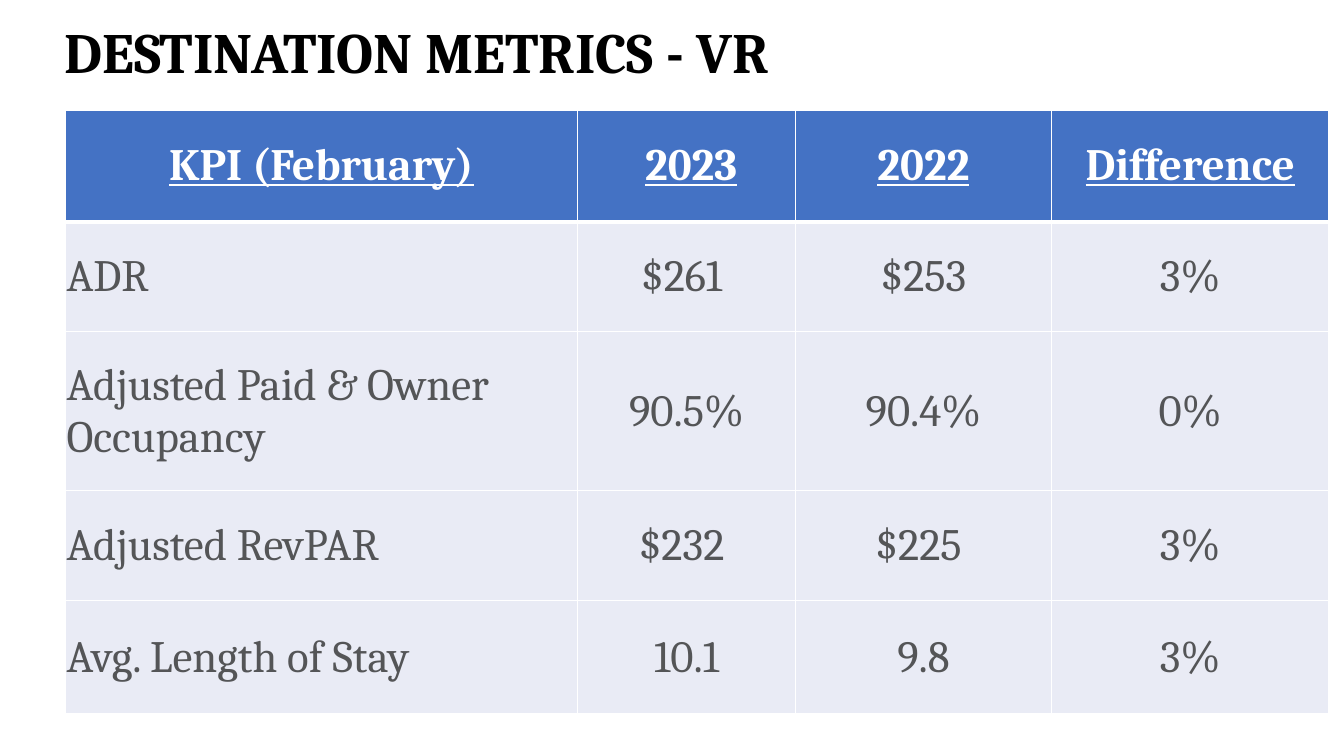
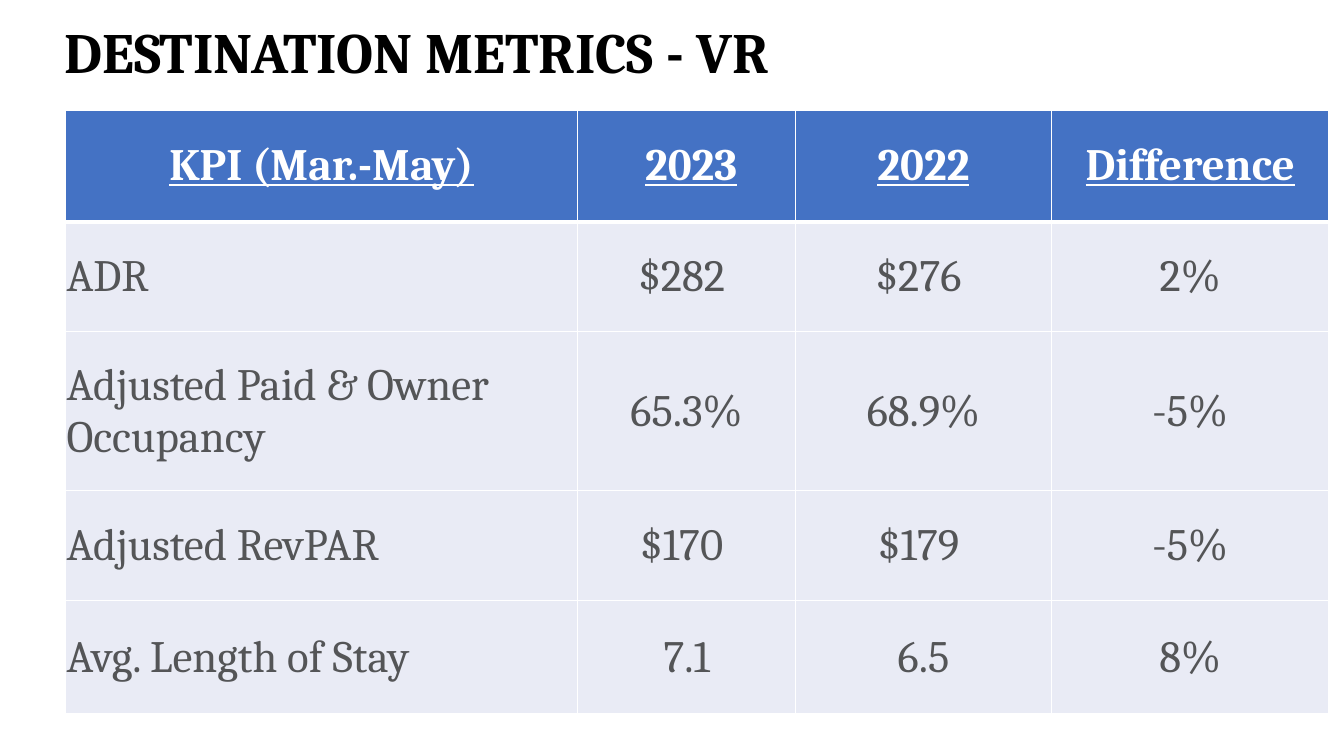
from dataclasses import dataclass

from lxml.etree import SubElement
from pptx import Presentation
from pptx.dml.color import RGBColor
from pptx.enum.text import MSO_ANCHOR as Anchor, PP_ALIGN as Align
from pptx.oxml.ns import qn
from pptx.util import Inches, Pt

# Shared style
FONT = "Cambria"
BLACK, WHITE, GREY = "000000", "FFFFFF", "545557"
BLUE, PALE = "4472C4", "E9EBF5"
TITLE = "DESTINATION METRICS - VR"
COLS = (5.08, 2.16, 2.54, 2.75)
ROWS = (1.1, 1.09, 1.58, 1.09, 1.12)
LABELS = ("ADR", "Adjusted Paid & Owner Occupancy",
          "Adjusted RevPAR", "Avg. Length of Stay")


@dataclass(frozen=True)
class Report:
    period: str
    values: tuple[tuple[str, str, str], ...]

    def grid(self) -> list[tuple[str, ...]]:
        head = (f"KPI ({self.period})", "2023", "2022", "Difference")
        return [head] + [(label, *row) for label, row in zip(LABELS, self.values)]


REPORTS = (
    Report("February", (("$261 ", "$253", "3%"), ("90.5%", "90.4%", "0%"),
                        ("$232 ", "$225 ", "3%"), ("10.1", "9.8", "3%"))),
    Report("Mar.-May", (("$282 ", "$276 ", "2%"), ("65.3%", "68.9%", "-5%"),
                        ("$170 ", "$179 ", "-5%"), ("7.1", "6.5", "8%"))),
)


def color(code: str) -> RGBColor:
    return RGBColor.from_string(code)


def add_run(para, text: str, size: float, code: str,
            bold: bool = False, under: bool = False) -> None:
    run = para.add_run()
    run.text = text
    font = run.font
    font.name, font.size, font.bold, font.underline = FONT, Pt(size), bold, under
    font.color.rgb = color(code)


def add_title(slide) -> None:
    box = slide.shapes.add_textbox(Inches(0.54), Inches(0.17),
                                   Inches(10.42), Inches(0.75))
    frame = box.text_frame
    frame.word_wrap = True
    frame.vertical_anchor = Anchor.MIDDLE
    para = frame.paragraphs[0]
    para.line_spacing = 0.9
    add_run(para, TITLE, 40.7, BLACK, bold=True)


def add_edges(cell, top: float, bottom: float) -> None:
    props = cell._tc.get_or_add_tcPr()
    for side, width in (("L", 1), ("R", 1), ("T", top), ("B", bottom)):
        line = SubElement(props, qn(f"a:ln{side}"), w=str(Pt(width)))
        fill = SubElement(line, qn("a:solidFill"))
        SubElement(fill, qn("a:srgbClr"), val=WHITE)


def fill_cell(cell, text: str, row: int, col: int) -> None:
    head = row == 0
    add_edges(cell, top=3 if row == 1 else 1, bottom=3 if head else 1)
    cell.fill.solid()
    cell.fill.fore_color.rgb = color(BLUE if head else PALE)

    # Only the first year heading is inset
    pad = 0 if head else 0.01
    cell.margin_left = Inches(0.09 if head and col == 1 else pad)
    cell.margin_top = cell.margin_right = Inches(pad)
    cell.margin_bottom = Inches(0)
    cell.vertical_anchor = Anchor.MIDDLE

    para = cell.text_frame.paragraphs[0]
    para.alignment = Align.CENTER if head or col else Align.LEFT
    add_run(para, text, 32, WHITE if head else GREY, bold=head, under=head)


def add_grid(slide, report: Report) -> None:
    frame = slide.shapes.add_table(len(ROWS), len(COLS), Inches(0.65), Inches(1.1),
                                   Inches(sum(COLS)), Inches(sum(ROWS)))
    table = frame.table
    for col, width in zip(table.columns, COLS):
        col.width = Inches(width)
    for row, height in zip(table.rows, ROWS):
        row.height = Inches(height)
    for r, texts in enumerate(report.grid()):
        for c, text in enumerate(texts):
            fill_cell(table.cell(r, c), text, r, c)


def main() -> None:
    deck = Presentation()
    deck.slide_width, deck.slide_height = Inches(13.33), Inches(7.5)
    for report in REPORTS:
        slide = deck.slides.add_slide(deck.slide_layouts[6])
        add_title(slide)
        add_grid(slide, report)
    deck.save("out.pptx")


if __name__ == "__main__":
    main()
